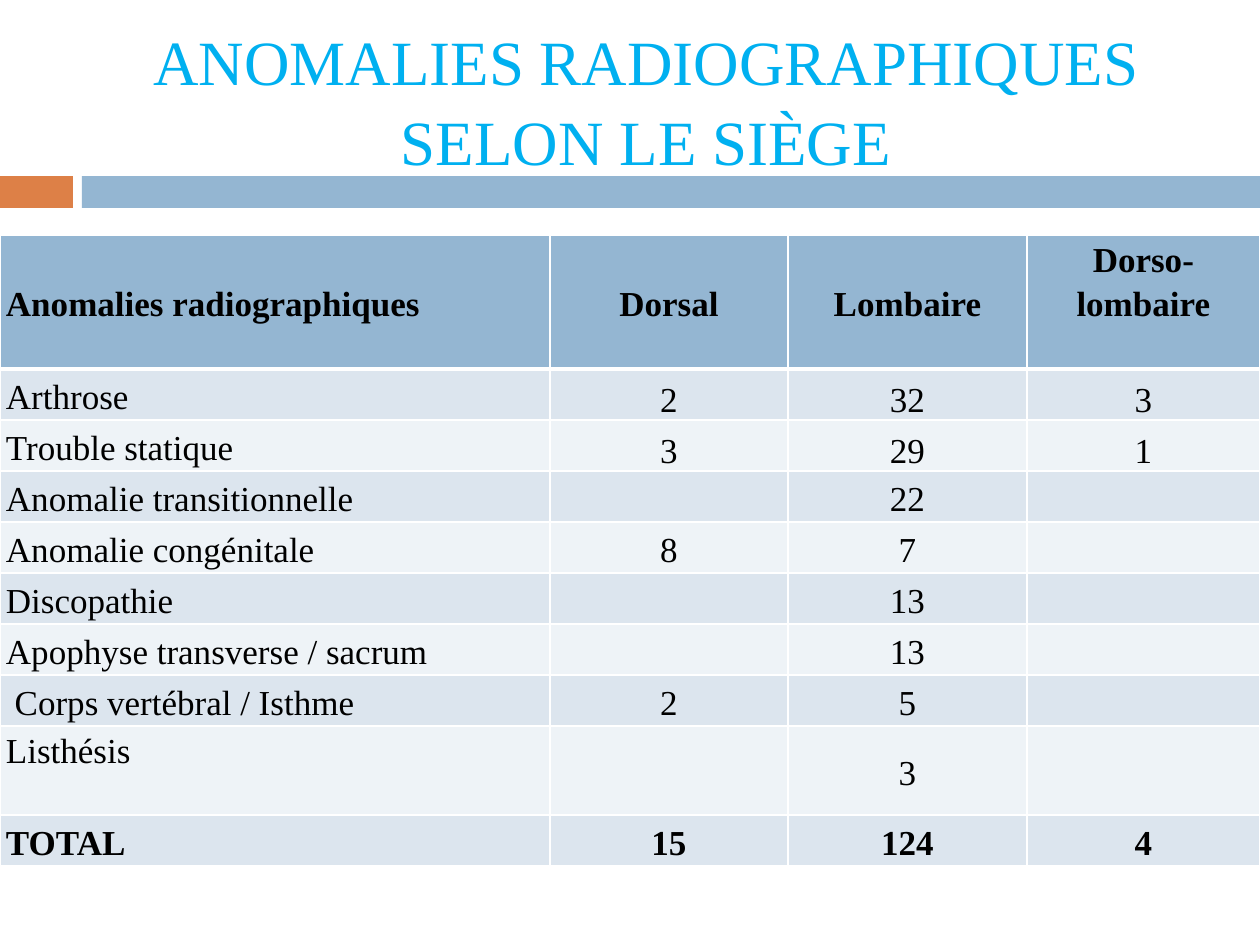
from pptx import Presentation
from pptx.dml.color import RGBColor
from pptx.enum.shapes import MSO_SHAPE
from pptx.enum.text import MSO_ANCHOR, PP_ALIGN
from pptx.oxml import parse_xml
from pptx.oxml.ns import nsdecls
from pptx.util import Emu, Pt


def px(num):
    return Emu(round(num * 914400 / 126))


def tint(code):
    return RGBColor.from_string(code)


class Deck:
    font = "Times New Roman"
    ink = "000000"
    sky = "00B0F0"
    blue = "94B6D2"
    rust = "DD8047"
    bands = ("DCE5EE", "EEF3F7")
    rule = "FFFFFF"

    def __init__(self, wide, high):
        self.prs = Presentation()
        self.prs.slide_width, self.prs.slide_height = px(wide), px(high)
        self.slide = self.prs.slides.add_slide(self.prs.slide_layouts[5])

    def style(self, para, size, code, align, bold=False, space=1.0):
        para.alignment = align
        para.line_spacing = space
        for run in para.runs:
            run.font.name = self.font
            run.font.size = Pt(size)
            run.font.bold = bold
            run.font.color.rgb = tint(code)

    def title(self, text, box):
        shape = self.slide.shapes.title
        shape.left, shape.top, shape.width, shape.height = map(px, box)
        frame = shape.text_frame
        frame.text = text
        frame.word_wrap = True
        frame.vertical_anchor = MSO_ANCHOR.TOP
        frame.margin_top = frame.margin_bottom = 0
        self.style(frame.paragraphs[0], 36, self.sky, PP_ALIGN.CENTER, space=1.05)

    def bar(self, box, code):
        shape = self.slide.shapes.add_shape(MSO_SHAPE.RECTANGLE, *map(px, box))
        shape.shadow.inherit = False
        shape.fill.solid()
        shape.fill.fore_color.rgb = tint(code)
        shape.line.fill.background()

    def edge(self, cell, side, width):
        cell._tc.get_or_add_tcPr().append(parse_xml(
            f'<a:ln{side} {nsdecls("a")} w="{Pt(width)}"><a:solidFill>'
            f'<a:srgbClr val="{self.rule}"/></a:solidFill></a:ln{side}>'))

    def cell(self, cell, text, fill, align, anchor, bold, thick):
        for side in "LRTB":
            self.edge(cell, side, 3 if side == thick else 1)
        cell.fill.solid()
        cell.fill.fore_color.rgb = tint(fill)
        cell.margin_left = cell.margin_right = px(6)
        cell.margin_top = cell.margin_bottom = 0
        cell.vertical_anchor = anchor
        cell.text = text
        self.style(cell.text_frame.paragraphs[0], 20, self.ink, align, bold, 1.15)

    def table(self, data, left, top, cols, rows, anchors):
        grid = self.slide.shapes.add_table(
            len(rows), len(cols), px(left), px(top), px(sum(cols)), px(sum(rows))).table
        for col, wide in zip(grid.columns, cols):
            col.width = px(wide)
        for row, high in zip(grid.rows, rows):
            row.height = px(high)
        last = len(rows) - 1
        for r, line in enumerate(data):
            fill = self.bands[(r - 1) % 2] if r else self.blue
            thick = {0: "B", 1: "T"}.get(r)
            for c, text in enumerate(line):
                align = PP_ALIGN.CENTER if c else PP_ALIGN.LEFT
                anchor = anchors.get((r, c), MSO_ANCHOR.MIDDLE)
                self.cell(grid.cell(r, c), text, fill, align, anchor,
                          r in (0, last), thick)

    def save(self):
        self.prs.save("out.pptx")


def main():
    deck = Deck(1260, 945)
    deck.bar((0, 176, 73, 32), deck.rust)
    deck.bar((82, 176, 1178, 32), deck.blue)
    deck.title("ANOMALIES RADIOGRAPHIQUES SELON LE SIÈGE", (84, 19, 1124, 204))
    data = [
        ("Anomalies radiographiques", "Dorsal", "Lombaire", "Dorso-lombaire"),
        ("Arthrose", "2", "32", "3"),
        ("Trouble statique", "3", "29", "1"),
        ("Anomalie transitionnelle", "", "22", ""),
        ("Anomalie congénitale", "8", "7", ""),
        ("Discopathie", "", "13", ""),
        ("Apophyse transverse / sacrum", "", "13", ""),
        (" Corps vertébral / Isthme", "2", "5", ""),
        ("Listhésis", "", "3", ""),
        ("TOTAL", "15", "124", "4"),
    ]
    anchors = {(r, c): MSO_ANCHOR.BOTTOM for r in (1, 2) for c in (1, 2, 3)}
    anchors[0, 3] = anchors[8, 0] = MSO_ANCHOR.TOP
    deck.table(data, 0, 235, (550, 238, 239, 233),
               [134] + [51] * 7 + [89, 51], anchors)
    deck.save()


if __name__ == "__main__":
    main()
